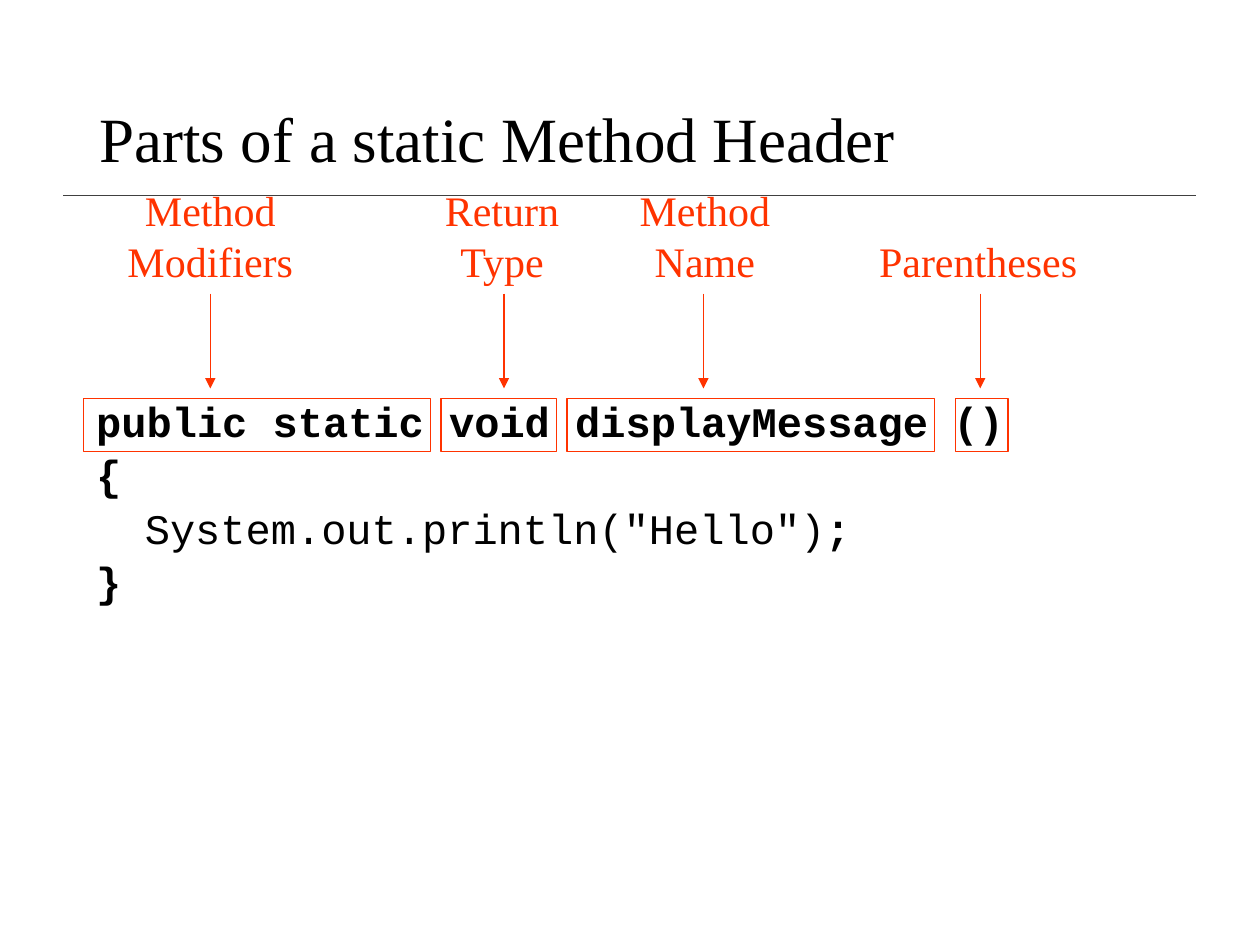
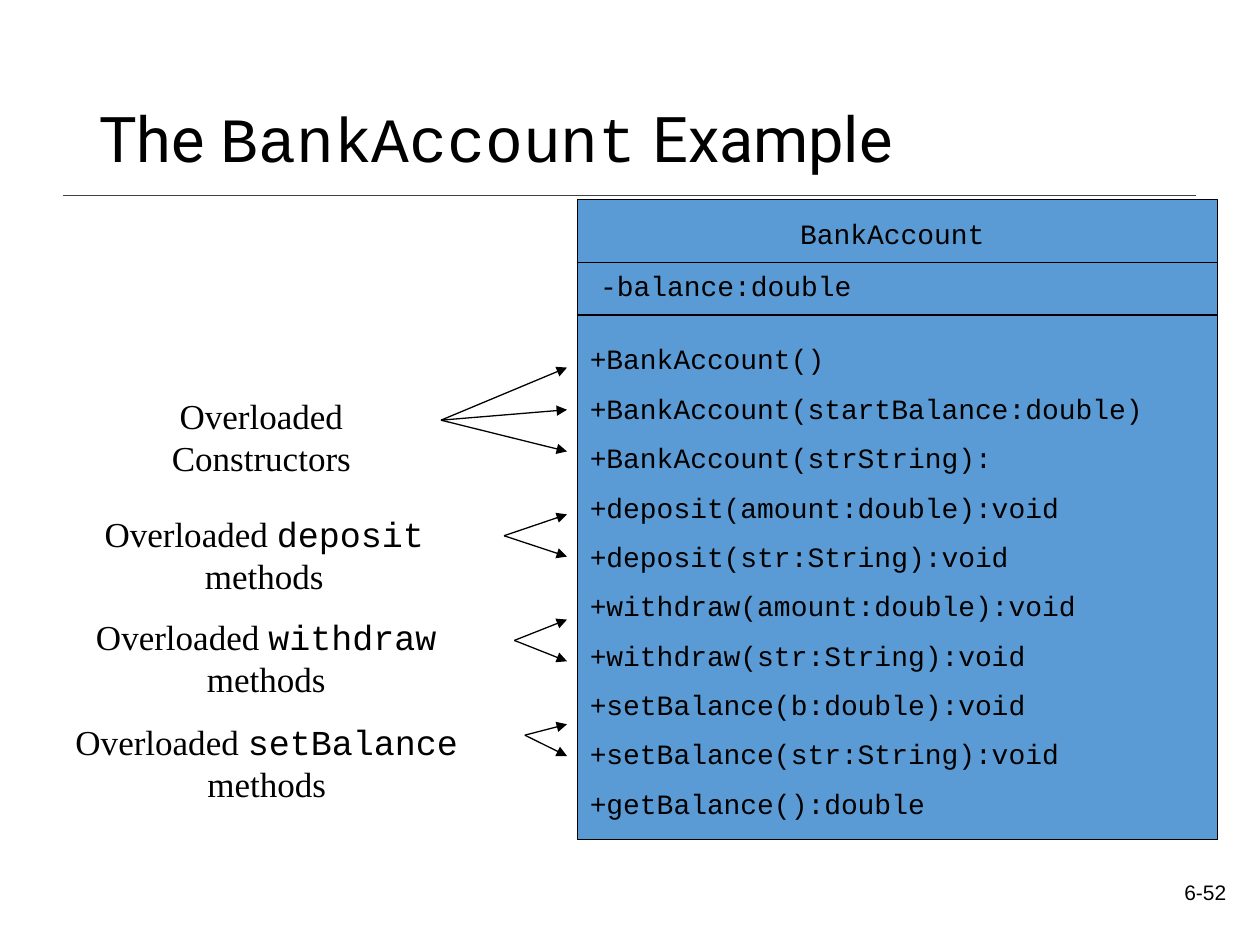
"""Build two slides on method headers and overloaded methods."""
from lxml.etree import SubElement
from pptx import Presentation
from pptx.dml.color import RGBColor
from pptx.enum.shapes import MSO_CONNECTOR as Link, MSO_SHAPE as Kind
from pptx.enum.text import MSO_ANCHOR as Anchor, MSO_AUTO_SIZE as Fit, PP_ALIGN as Align
from pptx.oxml.ns import qn
from pptx.util import Cm, Pt

HUES = {"ink": "000000", "rule": "404040", "mark": "FF3300", "class": "5B9BD5"}
SERIF, MONO, SANS, PLAIN = "Times New Roman", "Courier New", "Roboto", "Arial"

HEADER = [("Parts of a static Method Header", SERIF)]
PARTS = [
    ("Method Modifiers", 4.24, 4.44, 4.24, 1.69, 6.99),
    ("Return Type", 10.12, 3.18, 10.16, 8.89, 2.33),
    ("Method Name", 14.21, 3.38, 14.18, 11.43, 7.41),
    ("Parentheses", 19.72, 4.5, 19.76, 19.26, 1.06),
]
CODE = [
    ("public static void displayMessage ()", True, 0),
    ("{", True, 0),
    ('System.out.println("Hello");', False, 0.98),
    ("}", True, 0),
]

EXAMPLE = [("The ", SANS), ("BankAccount", MONO), (" Example", SANS)]
METHODS = [
    "+BankAccount()",
    "+BankAccount(startBalance:double)",
    "+BankAccount(strString):",
    "+deposit(amount:double):void",
    "+deposit(str:String):void",
    "+withdraw(amount:double):void",
    "+withdraw(str:String):void",
    "+setBalance(b:double):void",
    "+setBalance(str:String):void",
    "+getBalance():double",
]
FIELDS = [
    (["BankAccount"], (11.64, 4.24, 12.7, 0.94), Align.CENTER),
    (["-balance:double"], (11.85, 5.29, 11.43, 0.94), Align.LEFT),
    (METHODS, (11.64, 6.77, 12.91, 10.1), Align.LEFT),
]
GROUPS = [
    ([("Overloaded Constructors", SERIF)], 5.27, 7.83, 7, (8.89, 8.47), (7.41, 8.26, 9.1)),
    ([("Overloaded ", SERIF), ("deposit", MONO), (" methods", SERIF)],
     5.33, 10.2, 8.9, (10.16, 10.8), (10.37, 11.22)),
    ([("Overloaded ", SERIF), ("withdraw", MONO), (" methods", SERIF)],
     5.37, 12.28, 9.3, (10.37, 12.91), (12.49, 13.33)),
    ([("Overloaded ", SERIF), ("setBalance", MONO), (" methods", SERIF)],
     5.38, 14.39, 10.1, (10.58, 14.82), (14.6, 15.24)),
]


def color(name):
    return RGBColor.from_string(HUES[name])


def style(para, size, face=None, hue="ink", align=Align.LEFT, bold=False):
    para.alignment = align
    font = para.font
    font.size, font.name, font.bold = Pt(size), face, bold
    font.color.rgb = color(hue)


def fill(para, runs):
    for text, face in runs:
        run = para.add_run()
        run.text = text
        run.font.name = face


def add_text(slide, area, lines, size, face=None, hue="ink", align=Align.LEFT, gap=0):
    frame = slide.shapes.add_textbox(*map(Cm, area)).text_frame
    frame.word_wrap = True
    for i, line in enumerate(lines):
        para = frame.add_paragraph() if i else frame.paragraphs[0]
        if isinstance(line, str):
            para.text = line
        else:
            fill(para, line)
        style(para, size, face, hue, align)
        if i:
            para.space_before = Pt(gap)
    return frame


def add_line(slide, start, end, hue="ink", width=0.75, arrow=False):
    line = slide.shapes.add_connector(Link.STRAIGHT, *map(Cm, (*start, *end)))
    line.line.color.rgb = color(hue)
    line.line.width = Pt(width)
    props = line._element.spPr
    if arrow:
        SubElement(props.find(qn("a:ln")), qn("a:tailEnd"), type="triangle")
    SubElement(props, qn("a:effectLst"))


def add_box(slide, area, hue, back=None):
    box = slide.shapes.add_shape(Kind.RECTANGLE, *map(Cm, area))
    box.shadow.inherit = False
    box.line.color.rgb = color(hue)
    box.line.width = Pt(0.75)
    if back:
        box.fill.solid()
        box.fill.fore_color.rgb = color(back)
    else:
        box.fill.background()


def add_slide(deck, runs):
    slide = deck.slides.add_slide(deck.slide_layouts[5])
    add_line(slide, (1.27, 3.94), (24.1, 3.94), "rule", 1)
    title = slide.shapes.title
    title.left, title.top, title.width, title.height = map(Cm, (1.75, 1.02, 21.89, 3.68))
    frame = title.text_frame
    frame.auto_size, frame.vertical_anchor = Fit.NONE, Anchor.MIDDLE
    para = frame.paragraphs[0]
    fill(para, runs)
    style(para, 36)
    para.line_spacing = 0.9
    return slide


def build_header(deck):
    slide = add_slide(deck, HEADER)
    frame = add_text(slide, (1.69, 8.04, 21.59, 4.5), [c[0] for c in CODE], 24, MONO)
    for para, (_, bold, inset) in zip(frame.paragraphs, CODE):
        para.font.bold = bold
        para.line_spacing, para.space_before = 0.8, Pt(7.5)
        para._p.get_or_add_pPr().set("marL", str(Cm(inset)))
    code = frame.paragraphs[2]
    code.runs[0].text = code.text[:-1]
    end = code.add_run()
    end.text, end.font.bold = ";", True
    for label, mid, width, tip, left, span in PARTS:
        add_box(slide, (left, 8.04, span, 1.06), "mark")
        high = 0.25 + 1.02 * len(label.split())
        add_text(slide, (mid - width / 2, 5.89 - high, width, high), [label],
                 24, SERIF, "mark", Align.CENTER)
        add_line(slide, (tip, 5.92), (tip, 7.83), "mark", arrow=True)


def build_example(deck):
    slide = add_slide(deck, EXAMPLE)
    page = add_text(slide, (19.69, 17.35, 5.28, 1.27), ["6-52"], 12, PLAIN, align=Align.RIGHT)
    page.vertical_anchor = Anchor.MIDDLE
    add_box(slide, (11.64, 4.02, 12.91, 12.91), "ink", "class")
    for y in (5.29, 6.35):
        add_line(slide, (11.64, y), (24.55, y))
    for lines, area, align in FIELDS:
        add_text(slide, area, lines, 16, MONO, align=align, gap=9)
    for runs, mid, top, width, start, ends in GROUPS:
        add_text(slide, (mid - width / 2, top, width, 1.95), [runs], 20, align=Align.CENTER)
        for y in ends:
            add_line(slide, start, (11.43, y), arrow=True)


def main():
    deck = Presentation()
    deck.slide_width, deck.slide_height = Cm(25.4), Cm(19.05)
    build_header(deck)
    build_example(deck)
    deck.save("out.pptx")


if __name__ == "__main__":
    main()
